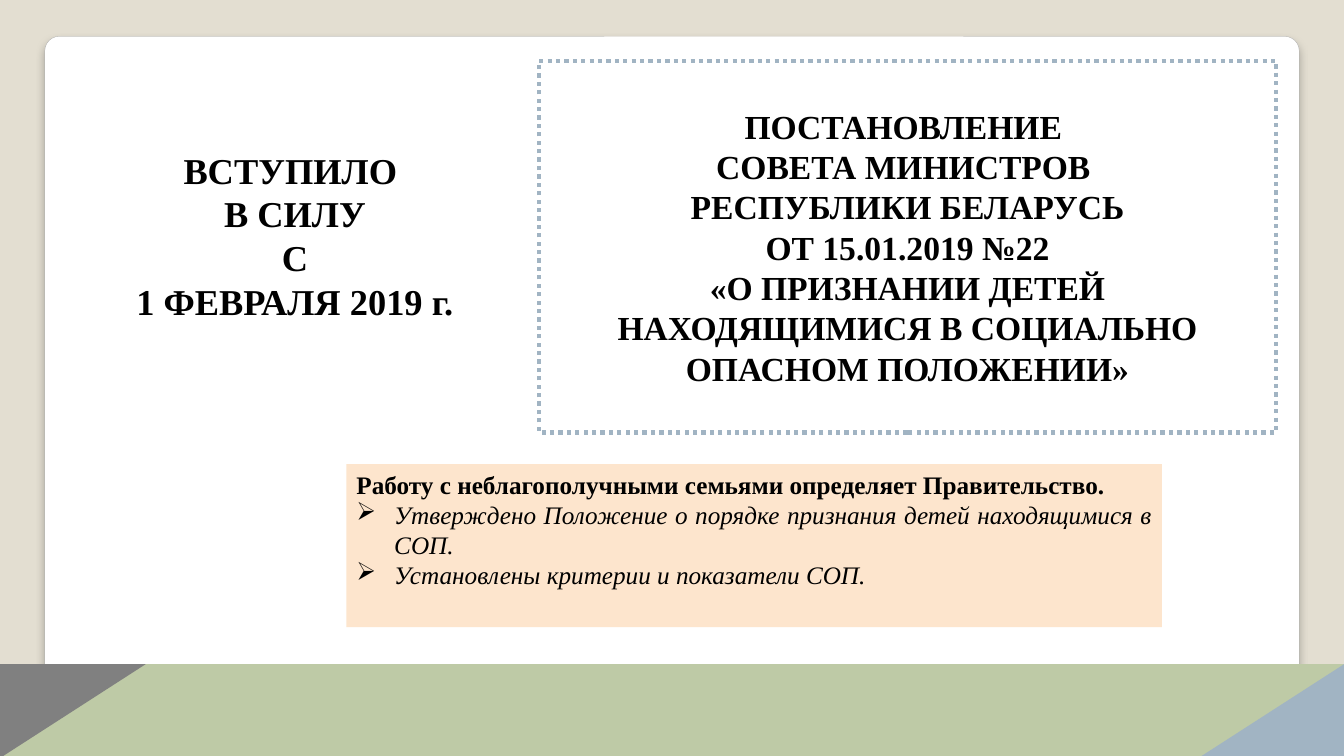
"""Builds the slide on the resolution that took effect on 1 February 2019."""
import pptx
import pptx.dml.color
import pptx.enum.dml
import pptx.enum.shapes
import pptx.enum.text
import pptx.oxml
import pptx.oxml.ns
import pptx.util

Pt = pptx.util.Pt
RGBColor = pptx.dml.color.RGBColor
SHAPES = pptx.enum.shapes.MSO_SHAPE
ALIGN = pptx.enum.text.PP_ALIGN
ANCHOR = pptx.enum.text.MSO_ANCHOR

BEIGE = RGBColor(0xE3, 0xDE, 0xD1)
WHITE = RGBColor(0xFF, 0xFF, 0xFF)
BLACK = RGBColor(0x00, 0x00, 0x00)
SILVER = RGBColor(0xA4, 0xA4, 0xA4)
GREY = RGBColor(0x80, 0x80, 0x80)
GREEN = RGBColor(0xBE, 0xCA, 0xA6)
BLUE = RGBColor(0xA1, 0xB4, 0xC3)
PEACH = RGBColor(0xFD, 0xE5, 0xCD)


def add_box(kind, left, top, width, height, fill=None):
    box = page.shapes.add_shape(kind, Pt(left), Pt(top), Pt(width), Pt(height))
    box.shadow.inherit = False
    box.line.fill.background()
    if fill is None:
        box.fill.background()
    else:
        box.fill.solid()
        box.fill.fore_color.rgb = fill
    return box


def write(box, lines, size, bold=True, italic=False, align=ALIGN.CENTER,
          anchor=ANCHOR.MIDDLE, bullet=None, append=False):
    frame = box.text_frame
    frame.word_wrap = True
    frame.vertical_anchor = anchor
    for number, line in enumerate(lines):
        para = frame.add_paragraph() if append or number else frame.paragraphs[0]
        para.alignment = align
        span = para.add_run()
        span.text = line
        span.font.name = "Times New Roman"
        span.font.size = Pt(size)
        span.font.bold = bold
        span.font.italic = italic
        span.font.color.rgb = BLACK
        if bullet:
            properties = para._p.get_or_add_pPr()
            properties.set("marL", str(Pt(27)))
            properties.set("indent", str(-Pt(27)))
            mark = pptx.oxml.parse_xml(
                f'<a:buChar {pptx.oxml.ns.nsdecls("a")} char="{bullet}"/>')
            properties.append(mark)


deck = pptx.Presentation()
deck.slide_width, deck.slide_height = Pt(960), Pt(540)
page = deck.slides.add_slide(deck.slide_layouts[6])
page.background.fill.solid()
page.background.fill.fore_color.rgb = BEIGE

card = add_box(SHAPES.ROUNDED_RECTANGLE, 32, 26, 896, 514, WHITE)
card.adjustments[0] = 0.02
card.line.color.rgb = SILVER
card.line.width = Pt(0.16)
effects = card._element.spPr.find(pptx.oxml.ns.qn("a:effectLst"))
effects.append(pptx.oxml.parse_xml(
    f'<a:outerShdw {pptx.oxml.ns.nsdecls("a")} blurRad="{Pt(6)}" dist="{Pt(4)}" '
    'dir="5400000" algn="t" rotWithShape="0"><a:srgbClr val="000000">'
    '<a:alpha val="25000"/></a:srgbClr></a:outerShdw>'))

effective_date = page.shapes.add_textbox(Pt(77.5), Pt(101.5), Pt(266.5), Pt(133))
write(effective_date, ["ВСТУПИЛО ", "В СИЛУ", "С", "1 ФЕВРАЛЯ 2019 г."], 26)

resolution = add_box(SHAPES.RECTANGLE, 385, 43.5, 526.5, 265.5)
resolution.line.color.rgb = BLUE
resolution.line.width = Pt(3)
resolution.line.dash_style = pptx.enum.dml.MSO_LINE.ROUND_DOT
write(resolution, [
    "ПОСТАНОВЛЕНИЕ ",
    "СОВЕТА МИНИСТРОВ ",
    "РЕСПУБЛИКИ БЕЛАРУСЬ",
    "ОТ 15.01.2019 №22",
    "«О ПРИЗНАНИИ ДЕТЕЙ НАХОДЯЩИМИСЯ В СОЦИАЛЬНО ОПАСНОМ ПОЛОЖЕНИИ»",
], 24)

add_box(SHAPES.RECTANGLE, 0, 474.5, 960, 67, GREEN)
for left, flip, colour in [(0, "flipV", GREY), (856, "flipH", BLUE)]:
    corner = add_box(SHAPES.RIGHT_TRIANGLE, left, 474.5, 104, 67, colour)
    corner._element.spPr.xfrm.set(flip, "1")

summary = add_box(SHAPES.RECTANGLE, 247.5, 331.5, 582.5, 116.5, PEACH)
write(summary, ["Работу с неблагополучными семьями определяет Правительство."],
      18, align=ALIGN.JUSTIFY, anchor=ANCHOR.TOP)
write(summary, [
    "Утверждено Положение о порядке признания детей находящимися в СОП.",
    "Установлены критерии и показатели СОП.",
], 18, bold=False, italic=True, align=ALIGN.JUSTIFY, anchor=ANCHOR.TOP,
    bullet="➢", append=True)

deck.save("out.pptx")
